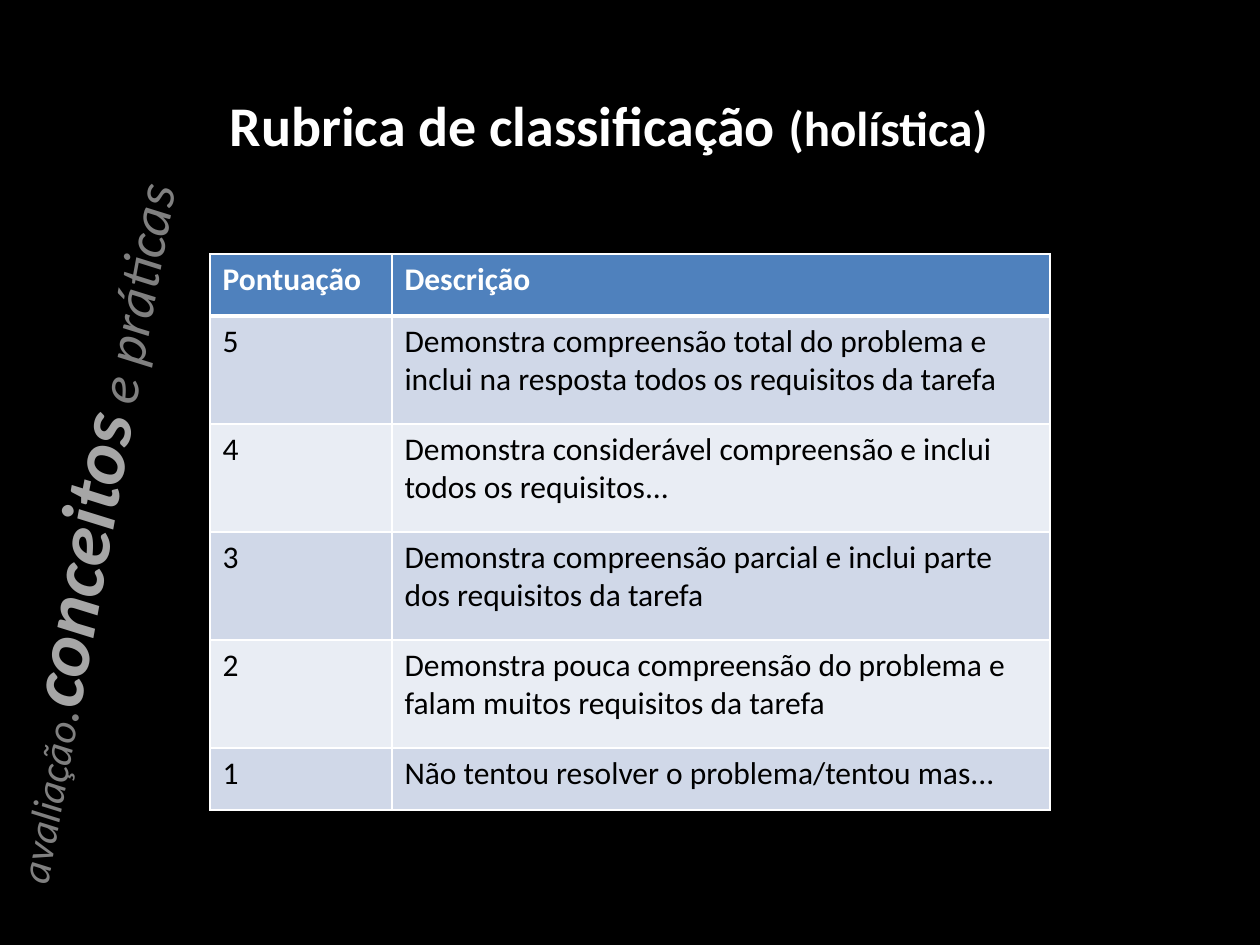
from lxml import etree
from pptx import Presentation
from pptx.dml.color import RGBColor
from pptx.enum.text import MSO_ANCHOR, PP_ALIGN
from pptx.oxml.ns import qn
from pptx.util import Emu, Pt

MIDDLE = MSO_ANCHOR.MIDDLE
CENTER = PP_ALIGN.CENTER
FONT = "Calibri"
WHITE, BLACK, BLUE = "FFFFFF", "000000", "4F81BD"
BANDS = ("D0D8E8", "E9EDF4")
GRAY, SILVER = "808080", "A6A6A6"

HEAD = ("Pontuação", "Descrição")
LEVELS = [
    ("5", "Demonstra compreensão total do problema e inclui na resposta todos os requisitos da tarefa"),
    ("4", "Demonstra considerável compreensão e inclui todos os requisitos..."),
    ("3", "Demonstra compreensão parcial e inclui parte dos requisitos da tarefa"),
    ("2", "Demonstra pouca compreensão do problema e falam muitos requisitos da tarefa"),
    ("1", "Não tentou resolver o problema/tentou mas..."),
]


def px(n):
    return Emu(round(n * 914400 / 126))


def rgb(code):
    return RGBColor.from_string(code)


def add_run(para, text, size, color, bold=False, italic=False):
    run = para.add_run()
    run.text = text
    font = run.font
    font.name, font.size = FONT, Pt(size)
    font.bold, font.italic = bold, italic
    font.color.rgb = rgb(color)


def add_edge(cell, side, width):
    line = etree.SubElement(cell._tc.get_or_add_tcPr(), qn(f"a:ln{side}"), w=str(Pt(width)))
    fill = etree.SubElement(line, qn("a:solidFill"))
    etree.SubElement(fill, qn("a:srgbClr"), val=WHITE)


def set_title(slide, x, y, w, h):
    title = slide.shapes.title
    title.left, title.top, title.width, title.height = map(px, (x, y, w, h))
    frame = title.text_frame
    frame.vertical_anchor = MIDDLE
    frame.margin_left = px(138)
    para = frame.paragraphs[0]
    para.alignment = CENTER
    add_run(para, "Rubrica de classificação ", 32, WHITE, bold=True)
    add_run(para, "(holística)", 28, WHITE, bold=True)


def add_rubric(slide, x, y, cols, rows):
    shape = slide.shapes.add_table(len(rows), len(cols), px(x), px(y), px(sum(cols)), px(sum(rows)))
    table = shape.table
    for col, width in zip(table.columns, cols):
        col.width = px(width)
    for i, texts in enumerate([HEAD, *LEVELS]):
        table.rows[i].height = px(rows[i])
        head = i == 0
        for j, text in enumerate(texts):
            cell = table.cell(i, j)
            for side in "LRTB":
                thick = (head and side == "B") or (i == 1 and side == "T")
                add_edge(cell, side, 3 if thick else 1)
            cell.fill.solid()
            cell.fill.fore_color.rgb = rgb(BLUE if head else BANDS[(i - 1) % 2])
            add_run(cell.text_frame.paragraphs[0], text, 18, WHITE if head else BLACK, bold=head)


def add_motto(slide, x, y, w, h):
    box = slide.shapes.add_textbox(*map(px, (x, y, w, h)))
    box.rotation = 280.4
    frame = box.text_frame
    frame.word_wrap = True
    frame.vertical_anchor = MIDDLE
    frame.margin_bottom = px(86)
    para = frame.paragraphs[0]
    para.alignment = CENTER
    add_run(para, "avaliação", 24, GRAY, italic=True)
    add_run(para, ".", 32, GRAY, italic=True)
    add_run(para, "conceitos", 44, SILVER, bold=True, italic=True)
    add_run(para, " e práticas", 32, GRAY, italic=True)


def main():
    deck = Presentation()
    deck.slide_width, deck.slide_height = px(1260), px(945)
    slide = deck.slides.add_slide(deck.slide_layouts[5])
    back = slide.background.fill
    back.solid()
    back.fore_color.rgb = rgb(BLACK)
    set_title(slide, 54, 45, 984, 158)
    add_rubric(slide, 210, 254, (182, 658), (62, 108, 108, 108, 108, 62))
    add_motto(slide, -462, 437, 1166, 203)
    deck.save("out.pptx")


if __name__ == "__main__":
    main()
